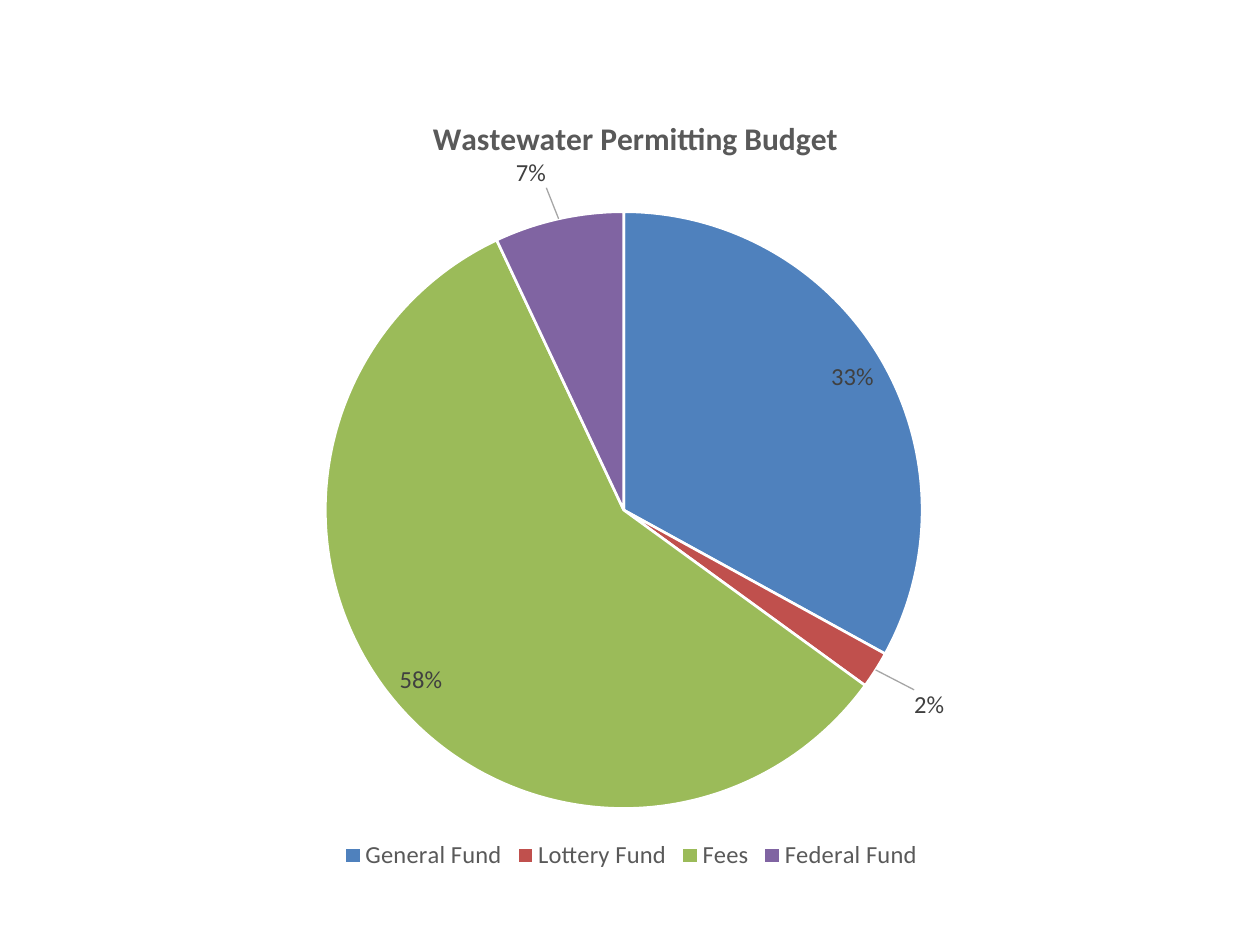
import pptx
import pptx.chart.data
import pptx.dml.color
import pptx.enum.chart
import pptx.oxml
import pptx.oxml.ns
import pptx.util
from pptx.util import Inches

RGBColor = pptx.dml.color.RGBColor
LabelPosition = pptx.enum.chart.XL_LABEL_POSITION

FONT = "Calibri"
BLACK = RGBColor(0x00, 0x00, 0x00)
WHITE = RGBColor(0xFF, 0xFF, 0xFF)
TITLE_GRAY = RGBColor(0x59, 0x59, 0x59)
LABEL_GRAY = RGBColor(0x40, 0x40, 0x40)
LEADER_GRAY = RGBColor(0xA6, 0xA6, 0xA6)

# Fund, percent of budget, slice colour
FUNDS = [
    ("General Fund", 33, RGBColor(0x4F, 0x81, 0xBD)),
    ("Lottery Fund", 2, RGBColor(0xC0, 0x50, 0x4D)),
    ("Fees", 58, RGBColor(0x9B, 0xBB, 0x59)),
    ("Federal Fund", 7, RGBColor(0x80, 0x64, 0xA2)),
]
# Labels pulled away from small slices: index -> offset as chart fractions
LABEL_OFFSETS = {1: (0.03, 0.02), 3: (-0.01, -0.03)}


def format_font(font, size, color, bold=False):
    font.name = FONT
    font.size = pptx.util.Pt(size)
    font.bold = bold
    font.color.rgb = color


def write_text(text_frame, text, size=18, color=TITLE_GRAY, bold=False):
    text_frame.text = text
    format_font(text_frame.paragraphs[0].runs[0].font, size, color, bold)


def make_layout(**settings):
    """Build a manual chart layout from its settings, in schema order."""
    children = "".join(f'<c:{name} val="{value}"/>' for name, value in settings.items())
    return pptx.oxml.parse_xml(
        f'<c:layout {pptx.oxml.ns.nsdecls("c")}>'
        f"<c:manualLayout>{children}</c:manualLayout></c:layout>"
    )


def replace_layout(element, layout, after=None):
    for old_layout in element.findall(pptx.oxml.ns.qn("c:layout")):
        element.remove(old_layout)
    if after is None:
        element.insert(0, layout)
    else:
        element.find(pptx.oxml.ns.qn(after)).addnext(layout)


def add_pie(slide):
    data = pptx.chart.data.CategoryChartData()
    data.categories = [name for name, _, _ in FUNDS]
    data.add_series("Series 1", [share for _, share, _ in FUNDS])
    frame = slide.shapes.add_chart(
        pptx.enum.chart.XL_CHART_TYPE.PIE,
        Inches(0.75), Inches(0.63), Inches(8.52), Inches(6.32), data,
    )
    chart = frame.chart
    format_font(chart.font, 10, BLACK)
    chart.plots[0].vary_by_categories = True
    plot_area = chart.plots[0]._element.getparent()
    replace_layout(plot_area, make_layout(
        layoutTarget="inner", xMode="edge", yMode="edge",
        x=0.215, y=0.166, w=0.556, h=0.75,
    ))
    return chart


def add_title(chart):
    chart.has_title = True
    title = chart.chart_title
    write_text(title.text_frame, "Wastewater Permitting Budget", bold=True)
    title.include_in_layout = False
    replace_layout(title._element, make_layout(
        xMode="edge", yMode="edge", x=0.31, y=0.04), after="c:tx")


def add_legend(chart):
    chart.has_legend = True
    chart.legend.position = pptx.enum.chart.XL_LEGEND_POSITION.BOTTOM
    chart.legend.include_in_layout = False
    format_font(chart.legend.font, 14, TITLE_GRAY)


def color_slices(series):
    for index, (_, _, color) in enumerate(FUNDS):
        slice_format = series.points[index].format
        slice_format.fill.solid()
        slice_format.fill.fore_color.rgb = color
        slice_format.line.color.rgb = WHITE
        slice_format.line.width = pptx.util.Pt(1.5)


def add_labels(series):
    labels = series.data_labels
    labels.show_value = False
    labels.show_percentage = True
    labels.number_format = "0%"
    labels.number_format_is_linked = False
    labels.position = LabelPosition.INSIDE_END
    format_font(labels.font, 14, LABEL_GRAY)

    # Small slices: labels outside, with leader lines
    for index, (x, y) in LABEL_OFFSETS.items():
        label = series.points[index].data_label
        format_font(label.font, 14, LABEL_GRAY)
        label.position = LabelPosition.OUTSIDE_END
    for element in labels._element.findall(pptx.oxml.ns.qn("c:dLbl")):
        index = int(element.find(pptx.oxml.ns.qn("c:idx")).get("val"))
        x, y = LABEL_OFFSETS[index]
        replace_layout(element, make_layout(x=x, y=y), after="c:idx")
        element.find(pptx.oxml.ns.qn("c:showVal")).set("val", "0")
        element.find(pptx.oxml.ns.qn("c:showPercent")).set("val", "1")
    labels._element.append(pptx.oxml.parse_xml(
        f'<c:leaderLines {pptx.oxml.ns.nsdecls("c", "a")}><c:spPr><a:ln w="9525">'
        f'<a:solidFill><a:srgbClr val="{LEADER_GRAY}"/></a:solidFill>'
        "</a:ln></c:spPr></c:leaderLines>"
    ))


def main():
    presentation = pptx.Presentation()
    presentation.slide_width = Inches(10)
    presentation.slide_height = Inches(7.5)
    slide = presentation.slides.add_slide(presentation.slide_layouts[6])

    # Budget pie with its title, legend and percentages
    chart = add_pie(slide)
    add_title(chart)
    add_legend(chart)
    series = chart.plots[0].series[0]
    color_slices(series)
    add_labels(series)

    presentation.save("out.pptx")


if __name__ == "__main__":
    main()
